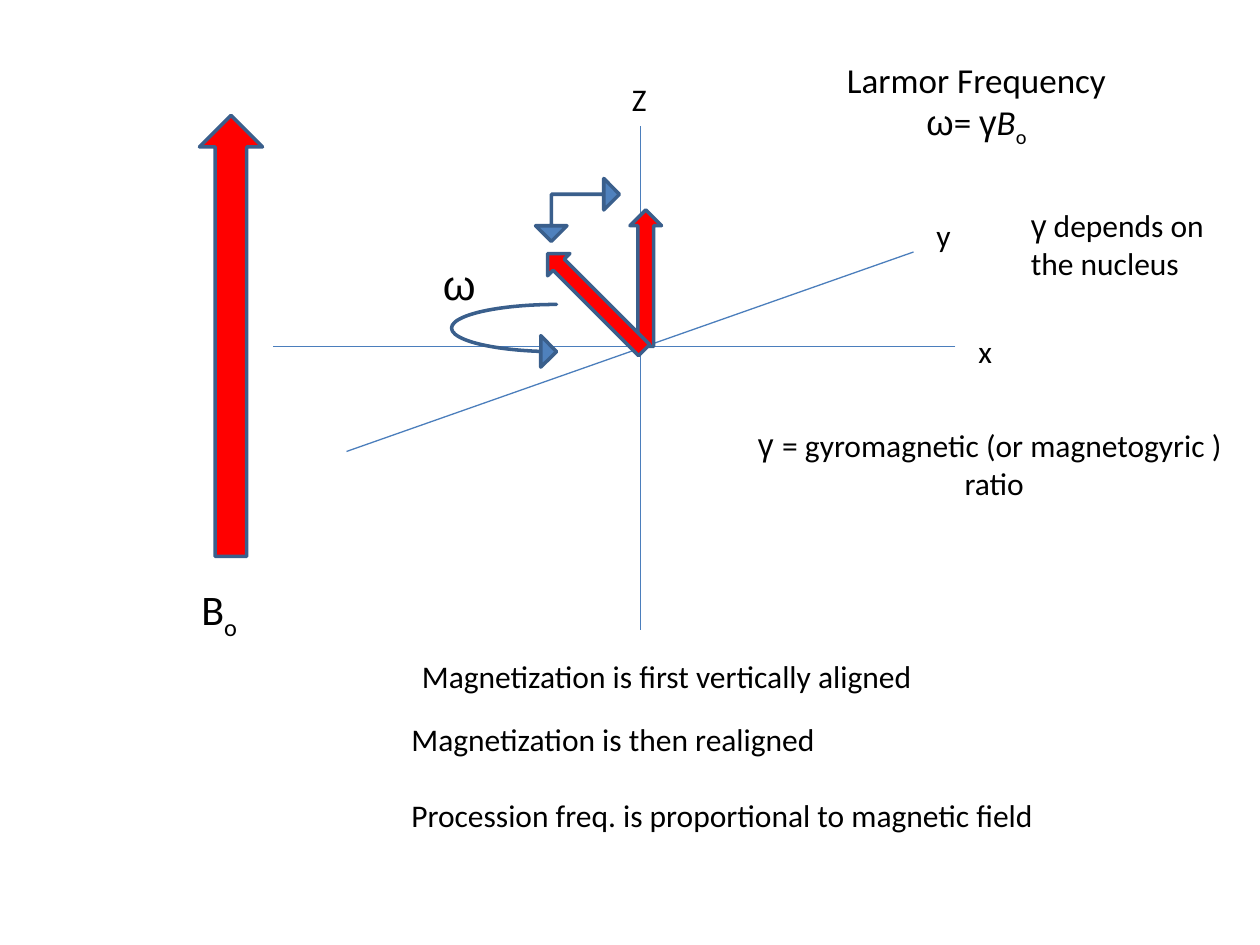
from lxml.etree import SubElement
from pptx import Presentation
from pptx.dml.color import RGBColor
from pptx.enum.shapes import MSO_CONNECTOR, MSO_SHAPE
from pptx.enum.text import MSO_AUTO_SIZE, PP_ALIGN
from pptx.oxml.ns import qn
from pptx.util import Emu, Pt

EMU_PER_PX = 9525  # 96 px to the inch
RED, BLUE, OUTLINE, AXIS, BLACK = "FF0000", "4F81BD", "3A5F8C", "4B7EBC", "000000"
GREEK = "ωγ"


def px(*lengths):
    return [Emu(length * EMU_PER_PX) for length in lengths]


def color(value):
    return RGBColor.from_string(value)


def add_arrow(page, kind, place, fill, rotation=0, adjustments=()):
    arrow = page.shapes.add_shape(kind, *px(*place))
    arrow.shadow.inherit = False
    arrow.rotation = rotation
    for index, value in enumerate(adjustments):
        arrow.adjustments[index] = value
    arrow.fill.solid()
    arrow.fill.fore_color.rgb = color(fill)
    arrow.line.color.rgb = color(OUTLINE)
    arrow.line.width = Pt(2)


def add_axis(page, *ends):
    axis = page.shapes.add_connector(MSO_CONNECTOR.STRAIGHT, *px(*ends))
    axis.line.color.rgb = color(AXIS)
    axis.line.width = Pt(0.75)
    SubElement(axis._element.spPr, qn("a:effectLst"))


def add_span(para, text, style, size):
    span = para.add_run()
    span.text = text
    span.font.size = Pt(size)
    span.font.name = "Arial" if text in GREEK else "Calibri"
    span.font.color.rgb = color(BLACK)
    if style == "italic":
        span.font.italic = True
    elif style == "subscript":
        span._r.get_or_add_rPr().set("baseline", "-25000")


def add_label(page, place, lines, size=18, align=PP_ALIGN.LEFT, wrap=False, gap=0):
    """Each line is a list of spans: plain text or a (text, style) pair."""
    box = page.shapes.add_textbox(*px(*place))
    frame = box.text_frame
    frame.word_wrap = wrap
    frame.auto_size = MSO_AUTO_SIZE.SHAPE_TO_FIT_TEXT
    for index, spans in enumerate(lines):
        para = frame.add_paragraph() if index else frame.paragraphs[0]
        para.alignment = align
        if index and gap:
            para.space_before = Pt(gap)
        for item in spans:
            text, style = (item, None) if isinstance(item, str) else item
            add_span(para, text, style, size)
    return box


def add_bullet(para, symbol):
    properties = para._p.get_or_add_pPr()
    SubElement(properties, qn("a:buFont"), typeface="Arial")
    SubElement(properties, qn("a:buChar"), char=symbol)


def main():
    deck = Presentation()
    deck.slide_width, deck.slide_height = px(960, 720)
    page = deck.slides.add_slide(deck.slide_layouts[6])
    subscript_o = ("o", "subscript")

    # Magnetic field
    add_arrow(page, MSO_SHAPE.UP_ARROW, (152, 88, 48, 336), RED)
    add_label(page, (144, 440, 56, 48), [["B", subscript_o]], size=24, wrap=True)

    # Axes and their names
    add_axis(page, 488, 96, 488, 480)
    add_axis(page, 728, 264, 208, 264)
    add_axis(page, 696, 192, 264, 344)
    for name, left, top in (("Z", 472, 56), ("x", 736, 248), ("y", 704, 160)):
        add_label(page, (left, top, 31, 38), [[name]])

    # Magnetization, aligned and then tilted
    add_arrow(page, MSO_SHAPE.UP_ARROW, (480, 160, 24, 104), RED)
    add_label(page, (312, 496, 397, 38), [["Magnetization is first vertically aligned"]])
    add_label(page, (304, 544, 499, 97),
              [["Magnetization is then realigned"],
               ["Procession freq. is proportional to magnetic field"]], gap=22)
    add_arrow(page, MSO_SHAPE.LEFT_UP_ARROW, (408, 136, 64, 48), BLUE,
              rotation=180, adjustments=(0, 0.25, 0.25))
    add_arrow(page, MSO_SHAPE.UP_ARROW, (442, 178, 24, 104), RED, rotation=315)

    # Precession
    add_arrow(page, MSO_SHAPE.CURVED_RIGHT_ARROW, (344, 232, 80, 48), BLUE,
              adjustments=(0, 0.5, 0.25))
    add_label(page, (328, 192, 41, 48), [["ω"]], size=24)

    # Larmor equation and its terms
    add_label(page, (632, 40, 224, 74),
              [["Larmor Frequency"], ["ω", "= ", "γ", ("B", "italic"), subscript_o]],
              size=20, align=PP_ALIGN.CENTER, wrap=True)
    add_label(page, (776, 152, 153, 68), [["γ", " depends on"], ["the nucleus"]])
    ratio = add_label(page, (568, 320, 379, 68),
                      [["= gyromagnetic (or magnetogyric )"], ["ratio"]],
                      align=PP_ALIGN.CENTER)
    add_bullet(ratio.text_frame.paragraphs[0], "γ")

    deck.save("out.pptx")


if __name__ == "__main__":
    main()
